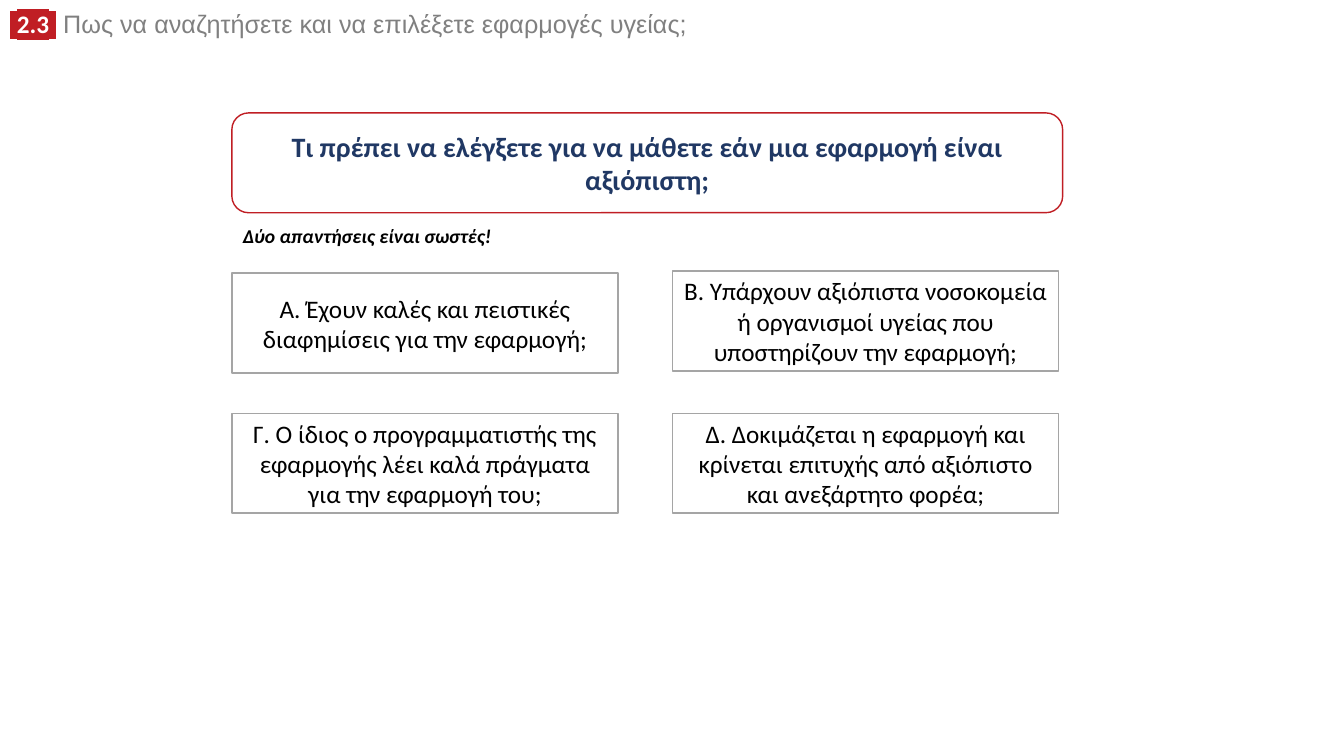
import pptx
import pptx.util
import pptx.dml.color
import pptx.enum.shapes
import pptx.enum.text
import pptx.oxml.ns
import lxml.etree

Inches = pptx.util.Inches
Align = pptx.enum.text.PP_ALIGN
Shape = pptx.enum.shapes.MSO_SHAPE

COLORS = {"white": "FFFFFF", "red": "C01E24", "navy": "203864",
          "heading": "808080", "border": "A5A5A5", "black": "000000"}

HEADING_NUMBER = "2.3"
HEADING = " Πως να αναζητήσετε και να επιλέξετε εφαρμογές υγείας;"
QUESTION = "Τι πρέπει να ελέγξετε για να μάθετε εάν μια εφαρμογή είναι αξιόπιστη;"
HINT = "Δύο απαντήσεις είναι σωστές!"
# Text, column, top in inches
ANSWERS = [
    ("A. Έχουν καλές και πειστικές διαφημίσεις για την εφαρμογή;", 0, 2.71),
    ("B. Υπάρχουν αξιόπιστα νοσοκομεία ή οργανισμοί υγείας που "
     "υποστηρίζουν την εφαρμογή;", 1, 2.69),
    ("Γ. Ο ίδιος ο προγραμματιστής της εφαρμογής λέει καλά πράγματα "
     "για την εφαρμογή του;", 0, 4.1),
    ("Δ. Δοκιμάζεται η εφαρμογή και κρίνεται επιτυχής από αξιόπιστο "
     "και ανεξάρτητο φορέα;", 1, 4.1),
]
LEFT, COLUMN_STEP = 2.3, 4.37
ANSWER_WIDTH, QUESTION_WIDTH, BOX_HEIGHT = 3.83, 8.24, 0.99


def rgb(color):
    return pptx.dml.color.RGBColor.from_string(COLORS[color])


def add_run(paragraph, text, size, color, font="Calibri", bold=False,
            italic=False, highlight=None):
    run = paragraph.add_run()
    run.text = text
    run.font.size = pptx.util.Pt(size)
    run.font.bold = bold
    run.font.italic = italic
    run.font.color.rgb = rgb(color)
    if highlight:
        marker = lxml.etree.SubElement(run.font._element,
                                       pptx.oxml.ns.qn("a:highlight"))
        lxml.etree.SubElement(marker, pptx.oxml.ns.qn("a:srgbClr"),
                              val=COLORS[highlight])
    run.font.name = font


def add_box(slide, preset, left, top, width, border, text, **style):
    box = slide.shapes.add_shape(preset, Inches(left), Inches(top),
                                 Inches(width), Inches(BOX_HEIGHT))
    box.shadow.inherit = False
    box.fill.solid()
    box.fill.fore_color.rgb = rgb("white")
    box.line.color.rgb = rgb(border)
    box.line.width = pptx.util.Pt(1)
    frame = box.text_frame
    frame.word_wrap = True
    frame.vertical_anchor = pptx.enum.text.MSO_ANCHOR.MIDDLE
    frame.paragraphs[0].alignment = Align.CENTER
    add_run(frame.paragraphs[0], text, **style)


def add_text(slide, left, top, width, height, wrap):
    """Add an empty text box and return its first paragraph."""
    frame = slide.shapes.add_textbox(Inches(left), Inches(top), Inches(width),
                                     Inches(height)).text_frame
    frame.word_wrap = wrap
    frame.auto_size = pptx.enum.text.MSO_AUTO_SIZE.SHAPE_TO_FIT_TEXT
    return frame.paragraphs[0]


def main():
    deck = pptx.Presentation()
    deck.slide_width, deck.slide_height = Inches(13.33), Inches(7.5)
    slide = deck.slides.add_slide(deck.slide_layouts[6])

    heading = add_text(slide, 0, 0.09, 9.52, 0.35, wrap=True)
    heading.line_spacing = 0.8
    for text, font in [(" ", "Arial"), (HEADING_NUMBER, "Calibri"), (" ", "Arial")]:
        add_run(heading, text, 18, "white", font, bold=True, highlight="red")
    add_run(heading, HEADING, 18, "heading", "Arial")

    add_box(slide, Shape.ROUNDED_RECTANGLE, LEFT, 1.12, QUESTION_WIDTH, "red",
            QUESTION, size=20, color="navy", bold=True)
    hint = add_text(slide, 2.31, 2.17, 2.68, 0.34, wrap=False)
    add_run(hint, HINT, 14, "black", bold=True, italic=True)
    for answer, column, top in ANSWERS:
        add_box(slide, Shape.RECTANGLE, LEFT + column * COLUMN_STEP, top,
                ANSWER_WIDTH, "border", answer, size=18, color="black")

    deck.save("out.pptx")


if __name__ == "__main__":
    main()
